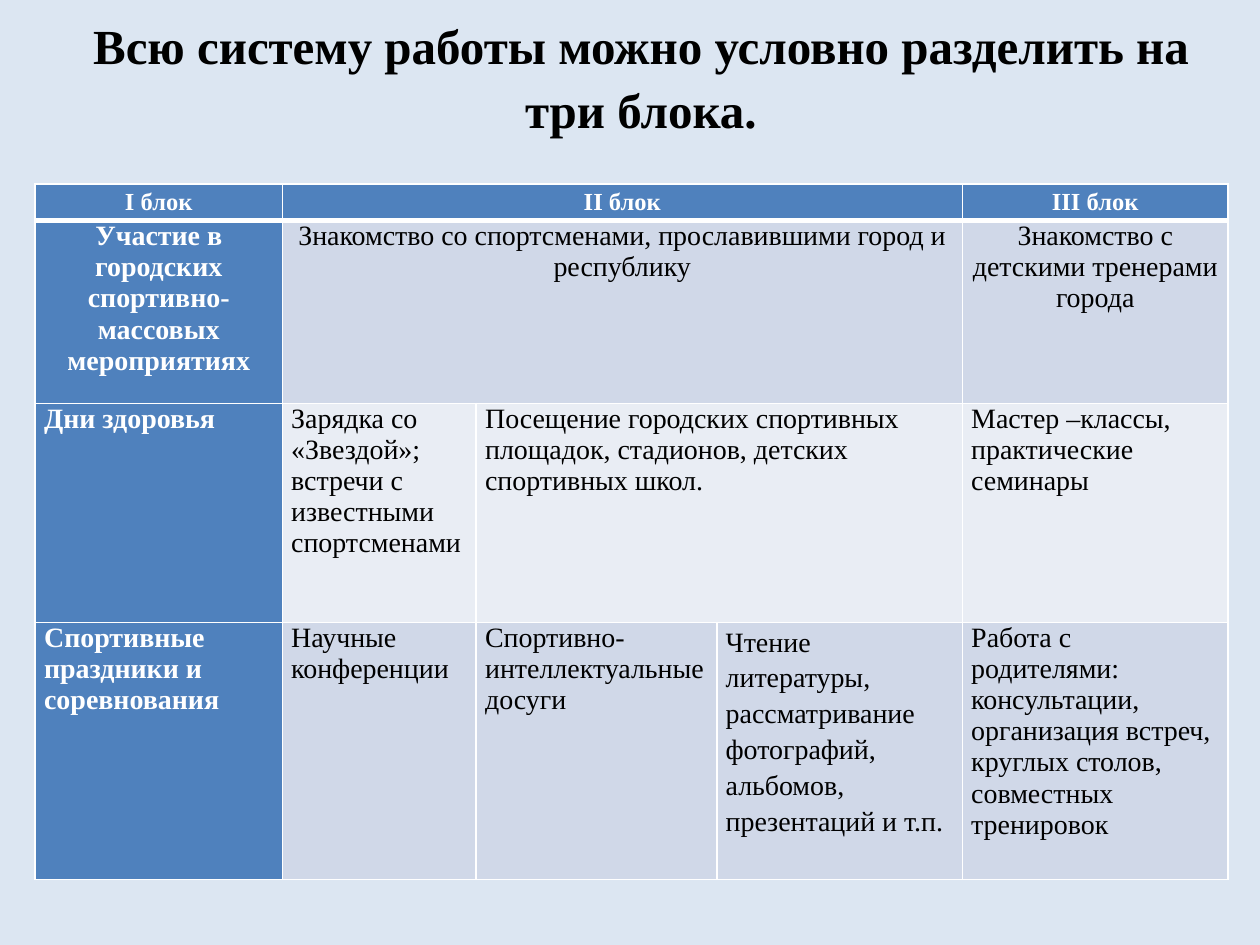
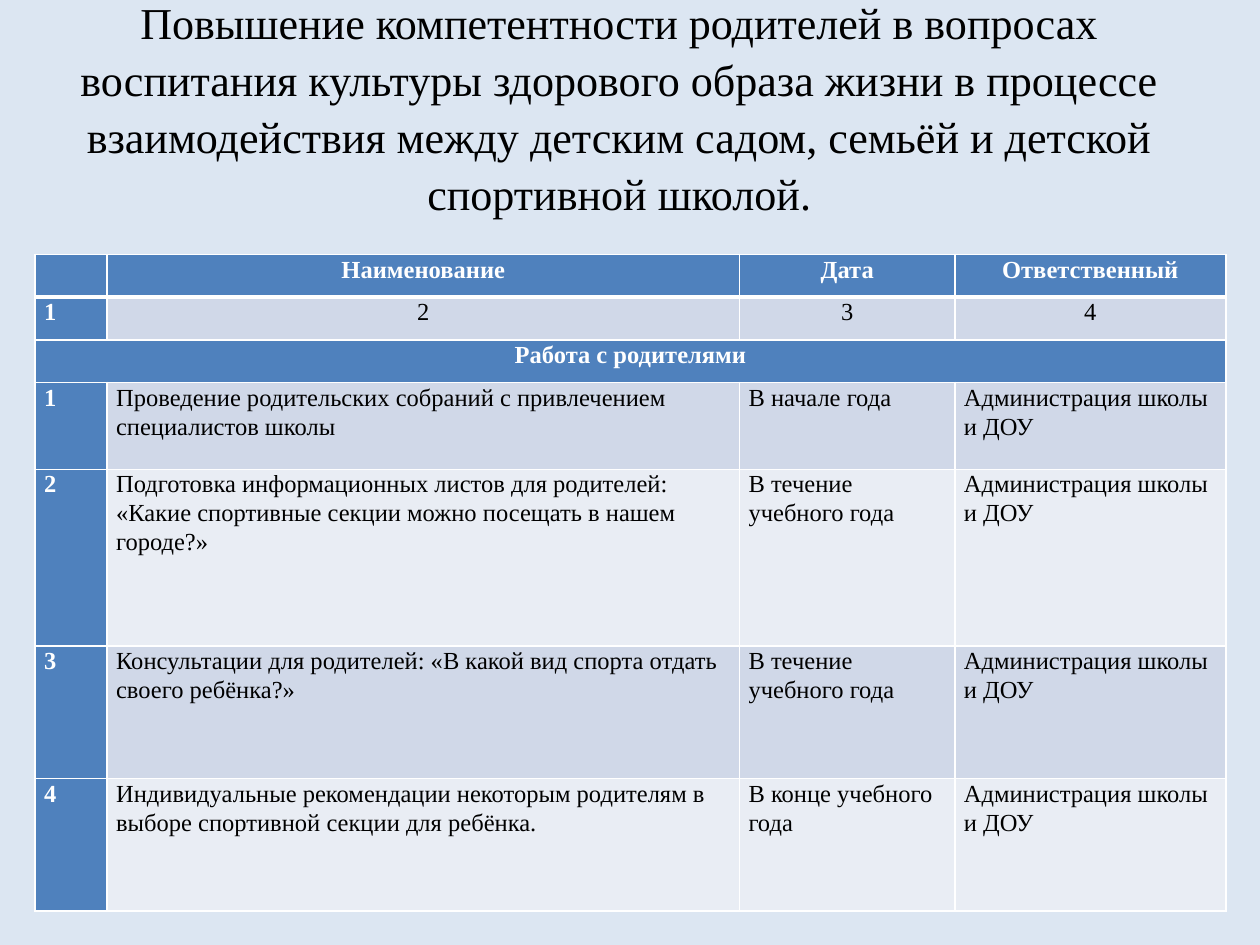
"""Build two slides with tables about sports work with children and parents."""
import pptx
import pptx.dml.color
import pptx.enum.text
import pptx.oxml
import pptx.oxml.ns
import pptx.util

Cm = pptx.util.Cm
Pt = pptx.util.Pt
RGBColor = pptx.dml.color.RGBColor
ALIGN = pptx.enum.text.PP_ALIGN

PALE = RGBColor(0xDC, 0xE6, 0xF2)
BLUE = RGBColor(0x4F, 0x81, 0xBD)
BANDS = [RGBColor(0xE9, 0xED, 0xF4), RGBColor(0xD0, 0xD8, 0xE8)]
WHITE = RGBColor(0xFF, 0xFF, 0xFF)
BLACK = RGBColor(0, 0, 0)
FONT = "Times New Roman"
STAFF = "Администрация школы и ДОУ"

SLIDES = [
    {
        "title": "Всю систему работы можно условно разделить на три блока.",
        "box": (1.12, 0.53, 23.6, 3.18), "size": 28, "bold": True, "foot": 1.35,
        "top": 3.71,
        "cols": [4.98, 3.91, 4.85, 4.95, 5.36],
        "rows": [0.74, 3.68, 4.42, 5.18],
        "sizes": [14, 16, 16, 16],
        "space": {},
        "cells": [
            ["I блок", "II блок", None, None, "III блок"],
            ["Участие в городских спортивно-массовых мероприятиях",
             "Знакомство со спортсменами, прославившими город и республику", None, None,
             "Знакомство с детскими тренерами города"],
            ["Дни здоровья",
             "Зарядка со «Звездой»;\nвстречи с известными спортсменами",
             "Посещение городских спортивных площадок, стадионов, детских спортивных школ.",
             None, "Мастер –классы,\nпрактические семинары"],
            ["Спортивные праздники и соревнования", "Научные конференции",
             "Спортивно-интеллектуальные досуги",
             "Чтение литературы, рассматривание фотографий, альбомов, презентаций и т.п.",
             "Работа с родителями:\nконсультации, организация встреч, круглых столов, "
             "совместных тренировок"],
        ],
    },
    {
        "title": "Повышение компетентности родителей в вопросах воспитания культуры "
                 "здорового образа жизни в процессе взаимодействия между детским садом, "
                 "семьёй и детской спортивной школой.",
        "box": (0.89, 1.32, 23.19, 1.6), "size": 25.2, "bold": False, "foot": 0.13,
        "top": 5.13,
        "cols": [1.45, 12.75, 4.34, 5.46],
        "rows": [0.86, 0.86, 0.86, 1.75, 3.56, 2.67, 2.67],
        "sizes": [14] * 7,
        "space": {"line_spacing": 1.07, "space_after": Pt(8)},
        "cells": [
            ["", "Наименование", "Дата", "Ответственный"],
            ["1", "2", "3", "4"],
            ["Работа с родителями", None, None, None],
            ["1", "Проведение родительских собраний с привлечением специалистов школы",
             "В начале года", STAFF],
            ["2", "Подготовка информационных листов для родителей: «Какие спортивные "
                  "секции можно посещать в нашем городе?»",
             "В течение учебного года", STAFF],
            ["3", "Консультации для родителей: «В какой вид спорта отдать своего ребёнка?»",
             "В течение учебного года", STAFF],
            ["4", "Индивидуальные рекомендации некоторым родителям в выборе спортивной "
                  "секции для ребёнка.", "В конце учебного года", STAFF],
        ],
    },
]


def style(item, values):
    for name, value in values.items():
        setattr(item, name, value)


def edge(cell, side, width):
    cell._tc.get_or_add_tcPr().append(pptx.oxml.parse_xml(
        f'<a:ln{side} {pptx.oxml.ns.nsdecls("a")} w="{Pt(width)}">'
        f'<a:solidFill><a:srgbClr val="{WHITE}"/></a:solidFill></a:ln{side}>'))


prs = pptx.Presentation()
style(prs, {"slide_width": Cm(25.4), "slide_height": Cm(19.05)})
back = prs.slide_master.background.fill
back.solid()
back.fore_color.rgb = PALE

for data in SLIDES:
    slide = prs.slides.add_slide(prs.slide_layouts[5])
    title = slide.shapes.title
    style(title, dict(zip(("left", "top", "width", "height"), map(Cm, data["box"]))))
    frame = title.text_frame
    frame.text = data["title"]
    style(frame, {"word_wrap": True, "margin_bottom": Cm(data["foot"]),
                  "auto_size": pptx.enum.text.MSO_AUTO_SIZE.NONE,
                  "vertical_anchor": pptx.enum.text.MSO_ANCHOR.MIDDLE})
    para = frame.paragraphs[0]
    style(para, {"alignment": ALIGN.CENTER, "line_spacing": 1.08})
    font = para.runs[0].font
    style(font, {"name": FONT, "size": Pt(data["size"]), "bold": data["bold"]})
    font.color.rgb = BLACK

    cols, rows = data["cols"], data["rows"]
    table = slide.shapes.add_table(len(rows), len(cols), Cm(0.71), Cm(data["top"]),
                                   Cm(sum(cols)), Cm(sum(rows))).table
    for col, width in zip(table.columns, cols):
        col.width = Cm(width)
    for row, height in zip(table.rows, rows):
        row.height = Cm(height)

    for r, texts in enumerate(data["cells"]):
        for c, text in enumerate(texts):
            cell = table.cell(r, c)
            head = r == 0 or c == 0
            for side in "LRTB":
                thick = (r, side) in ((0, "B"), (1, "T"))
                edge(cell, side, 3 if thick else 1)
            cell.fill.solid()
            cell.fill.fore_color.rgb = BLUE if head else BANDS[r % 2]
            if text is None:
                continue
            span = 1
            while c + span < len(texts) and texts[c + span] is None:
                span += 1
            if span > 1:
                cell.merge(table.cell(r, c + span - 1))
            style(cell, {"margin_left": Cm(0.18), "margin_right": Cm(0.18),
                         "margin_top": 0, "margin_bottom": 0})
            if r == 0 and not data["space"]:
                cell.vertical_anchor = pptx.enum.text.MSO_ANCHOR.MIDDLE
            cell.text = text
            mid = (r < 2 or span == len(cols)) and not (c == 0 and text.isdigit())
            for para in cell.text_frame.paragraphs:
                style(para, {"alignment": ALIGN.CENTER if mid else ALIGN.LEFT,
                             **data["space"]})
                if text.startswith("Чтение"):
                    style(para, {"line_spacing": 1.15, "space_after": Pt(10)})
                for run in para.runs:
                    style(run.font, {"name": FONT, "size": Pt(data["sizes"][r]),
                                     "bold": head})
                    run.font.color.rgb = WHITE if head else BLACK

prs.save("out.pptx")
